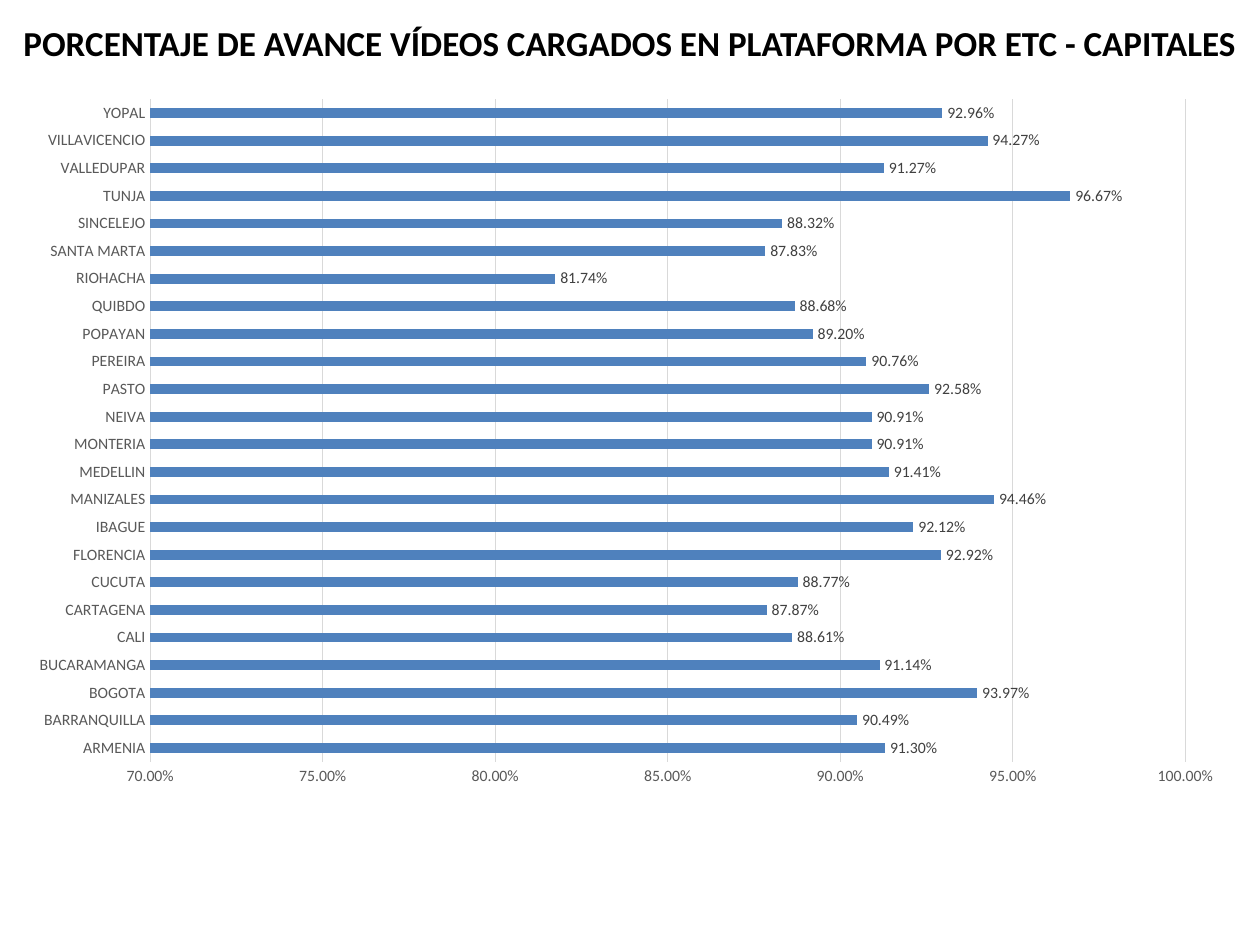
from dataclasses import dataclass

from pptx import Presentation
from pptx.chart.data import CategoryChartData
from pptx.dml.color import RGBColor
from pptx.enum.chart import XL_CHART_TYPE as ChartType
from pptx.enum.chart import XL_LABEL_POSITION as LabelPosition
from pptx.enum.chart import XL_TICK_MARK as TickMark
from pptx.enum.shapes import MSO_SHAPE as Preset
from pptx.enum.text import MSO_ANCHOR as Anchor
from pptx.enum.text import PP_ALIGN as Align
from pptx.util import Inches, Pt


@dataclass(frozen=True)
class Theme:
    font: str = "Calibri"
    paper: str = "FFFFFF"
    title: str = "000000"
    axis: str = "595959"
    label: str = "404040"
    grid: str = "D9D9D9"
    bar: str = "4F81BD"
    title_size: float = 20
    chart_size: float = 10
    label_size: float = 9
    grid_width: float = 0.75


TITLE = "PORCENTAJE DE AVANCE VÍDEOS CARGADOS EN PLATAFORMA POR ETC - CAPITALES"

# Progress by capital, in percent, from the bottom bar up
PROGRESS = {
    "ARMENIA": 91.30, "BARRANQUILLA": 90.49, "BOGOTA": 93.97,
    "BUCARAMANGA": 91.14, "CALI": 88.61, "CARTAGENA": 87.87,
    "CUCUTA": 88.77, "FLORENCIA": 92.92, "IBAGUE": 92.12,
    "MANIZALES": 94.46, "MEDELLIN": 91.41, "MONTERIA": 90.91,
    "NEIVA": 90.91, "PASTO": 92.58, "PEREIRA": 90.76,
    "POPAYAN": 89.20, "QUIBDO": 88.68, "RIOHACHA": 81.74,
    "SANTA MARTA": 87.83, "SINCELEJO": 88.32, "TUNJA": 96.67,
    "VALLEDUPAR": 91.27, "VILLAVICENCIO": 94.27, "YOPAL": 92.96,
}


def apply(target, values):
    for name, value in values.items():
        setattr(target, name, value)


class SlideBuilder:
    def __init__(self, presentation, theme):
        self.theme = theme
        self.width = presentation.slide_width
        self.height = presentation.slide_height
        self.slide = presentation.slides.add_slide(presentation.slide_layouts[6])

    def place(self, left, top, width, height):
        """Turn shares of the slide's size into lengths."""
        return (int(left * self.width), int(top * self.height),
                int(width * self.width), int(height * self.height))

    def style_font(self, font, size, color, bold=False):
        apply(font, {"name": self.theme.font, "size": Pt(size), "bold": bold})
        font.color.rgb = RGBColor.from_string(color)

    def style_line(self, line):
        line.color.rgb = RGBColor.from_string(self.theme.grid)
        line.width = Pt(self.theme.grid_width)

    def fill(self, target, color):
        target.fill.solid()
        target.fill.fore_color.rgb = RGBColor.from_string(color)

    def title(self, text, *box):
        shape = self.slide.shapes.add_shape(
            Preset.ROUND_2_DIAG_RECTANGLE, *self.place(*box))
        shape.shadow.inherit = False
        self.fill(shape, self.theme.paper)
        shape.line.fill.background()
        apply(shape.text_frame,
              {"word_wrap": True, "vertical_anchor": Anchor.MIDDLE})
        paragraph = shape.text_frame.paragraphs[0]
        paragraph.alignment = Align.CENTER
        run = paragraph.add_run()
        run.text = text
        self.style_font(run.font, self.theme.title_size, self.theme.title, True)

    def bar_chart(self, percentages, *box):
        theme = self.theme
        data = CategoryChartData(number_format="0.00%")
        data.categories = list(percentages)
        data.add_series("Avance", [round(value / 100, 4)
                                   for value in percentages.values()])
        chart = self.slide.shapes.add_chart(
            ChartType.BAR_CLUSTERED, *self.place(*box), data).chart
        apply(chart, {"has_legend": False, "has_title": False})
        self.style_font(chart.font, theme.chart_size, theme.title)

        # Axes
        category_axis, value_axis = chart.category_axis, chart.value_axis
        for axis in (category_axis, value_axis):
            apply(axis, {"major_tick_mark": TickMark.NONE,
                         "minor_tick_mark": TickMark.NONE})
            self.style_font(axis.tick_labels.font, theme.label_size, theme.axis)
        category_axis.has_major_gridlines = False
        self.style_line(category_axis.format.line)
        apply(value_axis, {"minimum_scale": 0.7, "maximum_scale": 1,
                           "major_unit": 0.05, "has_major_gridlines": True})
        apply(value_axis.tick_labels,
              {"number_format": "0.00%", "number_format_is_linked": False})
        value_axis.format.line.fill.background()
        self.style_line(value_axis.major_gridlines.format.line)

        # Bars and their labels
        plot = chart.plots[0]
        apply(plot, {"gap_width": 182, "vary_by_categories": False})
        series = plot.series[0]
        series.invert_if_negative = False
        self.fill(series.format, theme.bar)
        labels = series.data_labels
        apply(labels, {"show_value": True, "position": LabelPosition.OUTSIDE_END,
                       "number_format": "0.00%",
                       "number_format_is_linked": False})
        self.style_font(labels.font, theme.label_size, theme.label)


def main():
    presentation = Presentation()
    apply(presentation, {"slide_width": Inches(10), "slide_height": Inches(7.5)})
    builder = SlideBuilder(presentation, Theme())
    builder.title(TITLE, 0, 0.01, 1, 0.07)
    builder.bar_chart(PROGRESS, 0.012, 0.09, 0.97, 0.756)
    presentation.save("out.pptx")


if __name__ == "__main__":
    main()
